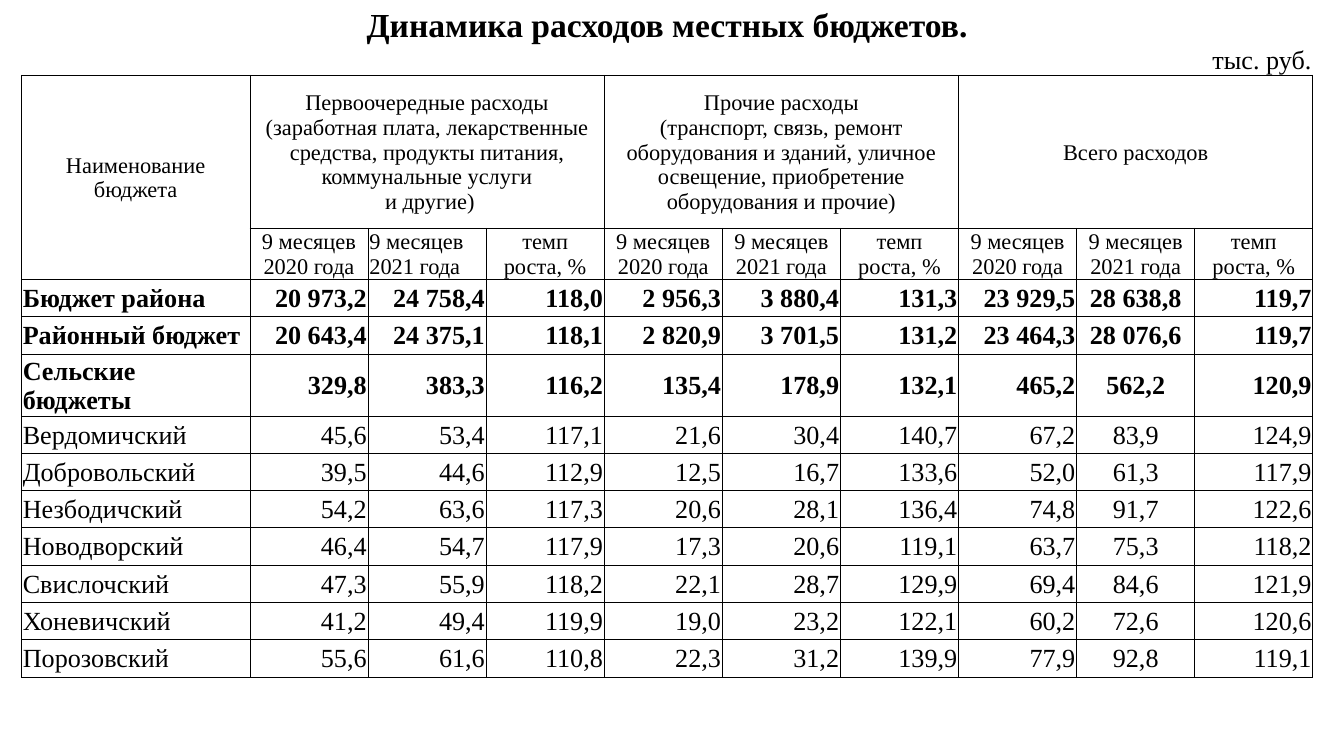
import lxml.etree
import pptx
import pptx.dml.color
import pptx.enum.text
import pptx.oxml.ns
import pptx.util

Inches = pptx.util.Inches
Align = pptx.enum.text.PP_ALIGN
Anchor = pptx.enum.text.MSO_ANCHOR

THEME = {
    "font": "Times New Roman",
    "ink": "000000",
    "title": 18,
    "body": 14,
    "header": 12,
    "line": 0.5,
}

TITLE = "Динамика расходов местных бюджетов."
UNIT = "тыс. руб."
NAME_HEADER = "Наименование бюджета"
GROUPS = [
    ["Первоочередные расходы (заработная плата, лекарственные средства, "
     "продукты питания, коммунальные услуги", " и другие)"],
    ["Прочие расходы", "(транспорт, связь, ремонт оборудования и зданий, уличное "
     "освещение, приобретение оборудования и прочие)"],
    ["Всего расходов"],
]
MEASURES = [["9 месяцев 2020 года"], ["9 месяцев 2021 года"], ["темп", "роста, %"]]
TOTAL_COUNT = 3
BUDGETS = [
    ("Бюджет района", "20 973,2", "24 758,4", "118,0", "2 956,3", "3 880,4", "131,3", "23 929,5", "28 638,8", "119,7"),
    ("Районный бюджет", "20 643,4", "24 375,1", "118,1", "2 820,9", "3 701,5", "131,2", "23 464,3", "28 076,6", "119,7"),
    ("Сельские бюджеты", "329,8", "383,3", "116,2", "135,4", "178,9", "132,1", "465,2", "562,2", "120,9"),
    ("Вердомичский", "45,6", "53,4", "117,1", "21,6", "30,4", "140,7", "67,2", "83,9", "124,9"),
    ("Добровольский", "39,5", "44,6", "112,9", "12,5", "16,7", "133,6", "52,0", "61,3", "117,9"),
    ("Незбодичский", "54,2", "63,6", "117,3", "20,6", "28,1", "136,4", "74,8", "91,7", "122,6"),
    ("Новодворский", "46,4", "54,7", "117,9", "17,3", "20,6", "119,1", "63,7", "75,3", "118,2"),
    ("Свислочский", "47,3", "55,9", "118,2", "22,1", "28,7", "129,9", "69,4", "84,6", "121,9"),
    ("Хоневичский", "41,2", "49,4", "119,9", "19,0", "23,2", "122,1", "60,2", "72,6", "120,6"),
    ("Порозовский", "55,6", "61,6", "110,8", "22,3", "31,2", "139,9", "77,9", "92,8", "119,1"),
]

TITLE_ROW, UNIT_ROW, GROUP_ROW, MEASURE_ROW, FIRST_BUDGET_ROW = range(5)
CENTERED_VALUE_COLUMN = 8
TABLE_WIDTH = 9.61
NAME_WIDTH = 1.7
VALUE_COUNT = len(GROUPS) * len(MEASURES)
COLUMN_WIDTHS = [NAME_WIDTH] + [(TABLE_WIDTH - NAME_WIDTH) / VALUE_COUNT] * VALUE_COUNT
SINGLE_LINE_HEIGHT = 2.5 / (len(BUDGETS) - 1)
ROW_HEIGHTS = [0.3, 0.23, 1.14, 0.37] + [
    0.46 if budget[0] == "Сельские бюджеты" else SINGLE_LINE_HEIGHT for budget in BUDGETS
]


def set_borders(cell, visible_sides):
    properties = cell._tc.get_or_add_tcPr()
    for position, side in enumerate("LRTB"):
        line = lxml.etree.Element(pptx.oxml.ns.qn("a:ln" + side))
        if side in visible_sides:
            line.set("w", str(pptx.util.Pt(THEME["line"])))
            fill = lxml.etree.SubElement(line, pptx.oxml.ns.qn("a:solidFill"))
            lxml.etree.SubElement(fill, pptx.oxml.ns.qn("a:srgbClr"), val=THEME["ink"])
        else:
            lxml.etree.SubElement(line, pptx.oxml.ns.qn("a:noFill"))
        properties.insert(position, line)


def prepare_cell(cell, row):
    cell.fill.background()
    cell.margin_left = cell.margin_right = cell.margin_top = Inches(0.01)
    cell.margin_bottom = 0
    set_borders(cell, {TITLE_ROW: "", UNIT_ROW: "B"}.get(row, "LRTB"))
    paragraph = cell.text_frame.paragraphs[0]
    lxml.etree.SubElement(
        paragraph._p, pptx.oxml.ns.qn("a:endParaRPr"), sz=str(THEME["header"] * 100)
    )


def write(cell, lines, size, alignment=Align.CENTER, bold=False, anchor=Anchor.MIDDLE):
    cell.vertical_anchor = anchor
    frame = cell.text_frame
    for index, line in enumerate(lines):
        paragraph = frame.add_paragraph() if index else frame.paragraphs[0]
        paragraph.alignment = alignment
        run = paragraph.add_run()
        run.text = line
        run.font.name = THEME["font"]
        run.font.size = pptx.util.Pt(THEME[size])
        run.font.bold = bold
        run.font.color.rgb = pptx.dml.color.RGBColor.from_string(THEME["ink"])


def build_table(slide):
    table = slide.shapes.add_table(
        len(ROW_HEIGHTS), len(COLUMN_WIDTHS), Inches(0.16), Inches(0.03),
        Inches(TABLE_WIDTH), Inches(sum(ROW_HEIGHTS)),
    ).table
    table.first_row = table.horz_banding = False
    for column, width in zip(table.columns, COLUMN_WIDTHS):
        column.width = Inches(width)
    for row, height in enumerate(ROW_HEIGHTS):
        table.rows[row].height = Inches(height)
        for cell in table.rows[row].cells:
            prepare_cell(cell, row)
    return table


def fill_headers(table):
    last_column = len(COLUMN_WIDTHS) - 1
    table.cell(TITLE_ROW, 0).merge(table.cell(TITLE_ROW, last_column))
    for column in (1, 3, 5):
        table.cell(UNIT_ROW, column).merge(table.cell(UNIT_ROW, column + 1))
    table.cell(GROUP_ROW, 0).merge(table.cell(MEASURE_ROW, 0))
    write(table.cell(TITLE_ROW, 0), [TITLE], "title", bold=True, anchor=Anchor.BOTTOM)
    write(table.cell(UNIT_ROW, last_column), [UNIT], "body", Align.RIGHT, anchor=Anchor.BOTTOM)
    write(table.cell(GROUP_ROW, 0), [NAME_HEADER], "header")
    for group, lines in enumerate(GROUPS):
        first = 1 + group * len(MEASURES)
        table.cell(GROUP_ROW, first).merge(table.cell(GROUP_ROW, first + len(MEASURES) - 1))
        write(table.cell(GROUP_ROW, first), lines, "header")
        for column, measure in enumerate(MEASURES, first):
            alignment = Align.LEFT if column == 2 else Align.CENTER
            write(table.cell(MEASURE_ROW, column), measure, "header", alignment)


def fill_budgets(table):
    alignments = {0: Align.LEFT, CENTERED_VALUE_COLUMN: Align.CENTER}
    for index, budget in enumerate(BUDGETS):
        for column, text in enumerate(budget):
            write(
                table.cell(FIRST_BUDGET_ROW + index, column), [text], "body",
                alignments.get(column, Align.RIGHT), bold=index < TOTAL_COUNT,
            )


def main():
    presentation = pptx.Presentation()
    presentation.slide_width = Inches(10)
    presentation.slide_height = presentation.slide_width * 9 // 16
    slide = presentation.slides.add_slide(presentation.slide_layouts[6])
    table = build_table(slide)
    fill_headers(table)
    fill_budgets(table)
    presentation.save("out.pptx")


if __name__ == "__main__":
    main()
